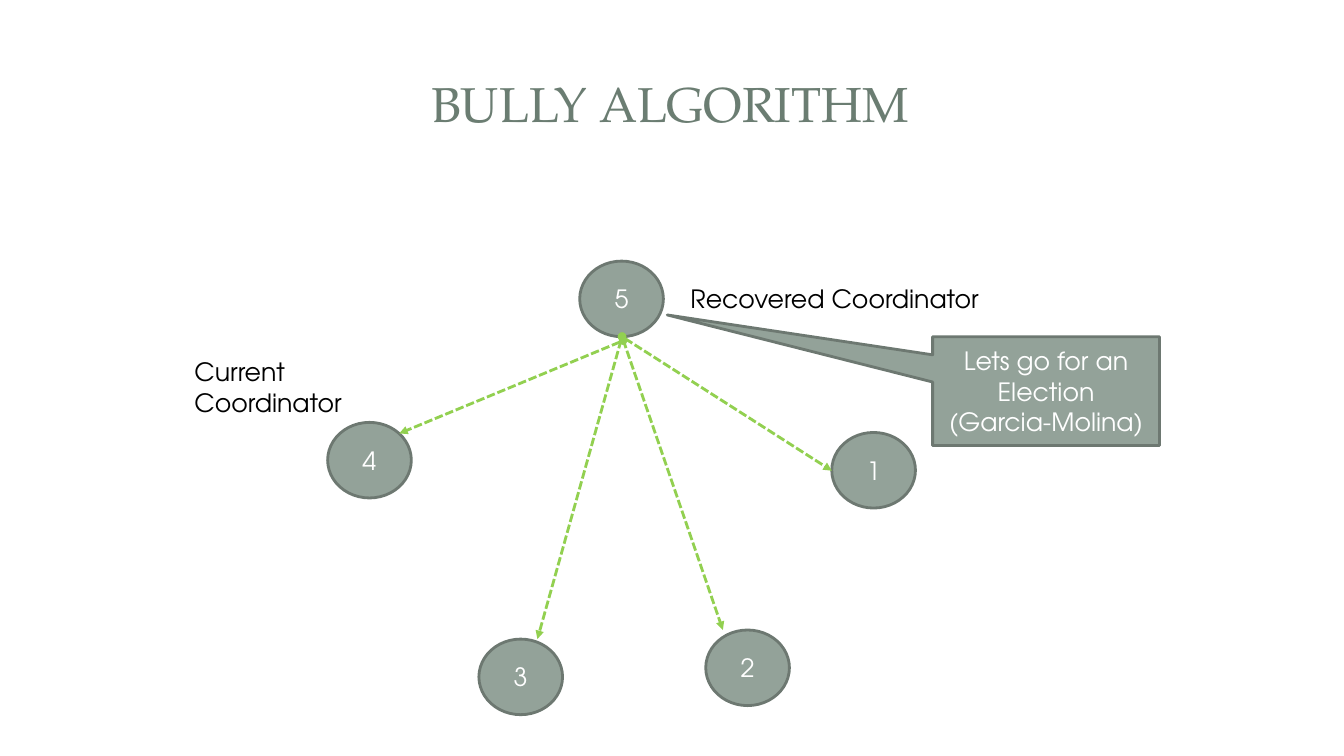
import dataclasses

import lxml.etree
import pptx
import pptx.dml.color
import pptx.enum.dml
import pptx.enum.shapes
import pptx.enum.text
import pptx.oxml.ns
import pptx.shapes.autoshape
import pptx.slide
import pptx.util

Inches = pptx.util.Inches
Kind = pptx.enum.shapes.MSO_SHAPE
Align = pptx.enum.text.PP_ALIGN
Anchor = pptx.enum.text.MSO_ANCHOR

SANS, SERIF = "TeX Gyre Adventor", "TeX Gyre Pagella"
SAGE, EDGE, GREEN = "93A299", "6D7871", "92D050"
WHITE, BLACK, MOSS = "FFFFFF", "000000", "6B7D72"
HUB = (6.17, 3.34)


@dataclasses.dataclass
class Node:
    name: str
    left: float
    top: float


@dataclasses.dataclass
class Label:
    text: str
    left: float
    top: float
    width: float
    height: float


@dataclasses.dataclass
class Arrow:
    end: tuple[float, float]
    start: tuple[float, float] = HUB


NODES = [
    Node("4", 3.25, 4.19),
    Node("2", 7, 6.25),
    Node("3", 4.75, 6.34),
    Node("1", 8.25, 4.29),
    Node("5", 5.75, 2.59),
]
LABELS = [
    Label("Recovered Coordinator", 6.75, 2.76, 3.12, 0.4),
    Label("Current\nCoordinator", 1.83, 3.49, 1.69, 0.71),
]
ARROWS = [
    Arrow((3.96, 4.3), (6.18, 3.38)),
    Arrow((5.33, 6.34)),
    Arrow((7.17, 6.25)),
    Arrow((8.25, 4.67)),
]
TITLE = Label("BULLY ALGORITHM", 0.62, 0.45, 12.05, 1.14)
SPEECH = Label("Lets go for an Election\n(Garcia-Molina)", 9.25, 3.34, 2.25, 1.08)


def color(code: str) -> pptx.dml.color.RGBColor:
    return pptx.dml.color.RGBColor.from_string(code)


def write(shape: pptx.shapes.autoshape.Shape, text: str, ink: str,
          align: Align = Align.CENTER, anchor: Anchor = Anchor.MIDDLE,
          size: float = 18, face: str = SANS, wrap: bool = True) -> None:
    frame = shape.text_frame
    frame.text = text
    frame.word_wrap = wrap
    frame.vertical_anchor = anchor
    for line in frame.paragraphs:
        line.alignment = align
        for run in line.runs:
            run.font.size = pptx.util.Pt(size)
            run.font.name = face
            run.font.color.rgb = color(ink)


def add_box(slide: pptx.slide.Slide, label: Label) -> pptx.shapes.autoshape.Shape:
    return slide.shapes.add_textbox(Inches(label.left), Inches(label.top),
                                    Inches(label.width), Inches(label.height))


def add_form(slide: pptx.slide.Slide, kind: Kind,
             label: Label) -> pptx.shapes.autoshape.Shape:
    """Add a sage shape with centred white text."""
    shape = slide.shapes.add_shape(kind, Inches(label.left), Inches(label.top),
                                   Inches(label.width), Inches(label.height))
    shape.shadow.inherit = False
    shape.fill.solid()
    shape.fill.fore_color.rgb = color(SAGE)
    shape.line.color.rgb = color(EDGE)
    shape.line.width = pptx.util.Pt(2)
    write(shape, label.text, WHITE)
    return shape


def add_arrow(slide: pptx.slide.Slide, arrow: Arrow) -> None:
    """Add a dashed line with a dot at its start and an arrowhead at its end."""
    ends = [Inches(value) for value in arrow.start + arrow.end]
    link = slide.shapes.add_connector(pptx.enum.shapes.MSO_CONNECTOR.STRAIGHT, *ends)
    link.line.color.rgb = color(GREEN)
    link.line.width = pptx.util.Pt(2)
    link.line.dash_style = pptx.enum.dml.MSO_LINE.SQUARE_DOT
    qn = pptx.oxml.ns.qn
    props = link._element.spPr
    stroke = props.find(qn("a:ln"))
    for tag, tip in (("a:headEnd", "oval"), ("a:tailEnd", "triangle")):
        lxml.etree.SubElement(stroke, qn(tag), type=tip)
    lxml.etree.SubElement(props, qn("a:effectLst"))


def main() -> None:
    deck = pptx.Presentation()
    deck.slide_width, deck.slide_height = Inches(13.33), Inches(7.5)
    slide = deck.slides.add_slide(deck.slide_layouts[6])

    write(add_box(slide, TITLE), TITLE.text, MOSS, size=35, face=SERIF)
    for node in NODES:
        add_form(slide, Kind.OVAL, Label(node.name, node.left, node.top, 0.83, 0.75))
    for label in LABELS:
        write(add_box(slide, label), label.text, BLACK, Align.LEFT, Anchor.TOP,
              wrap=False)
    speech = add_form(slide, Kind.RECTANGULAR_CALLOUT, SPEECH)
    speech.adjustments[0], speech.adjustments[1] = -1.67, -0.7
    for arrow in ARROWS:
        add_arrow(slide, arrow)

    deck.save("out.pptx")


if __name__ == "__main__":
    main()
